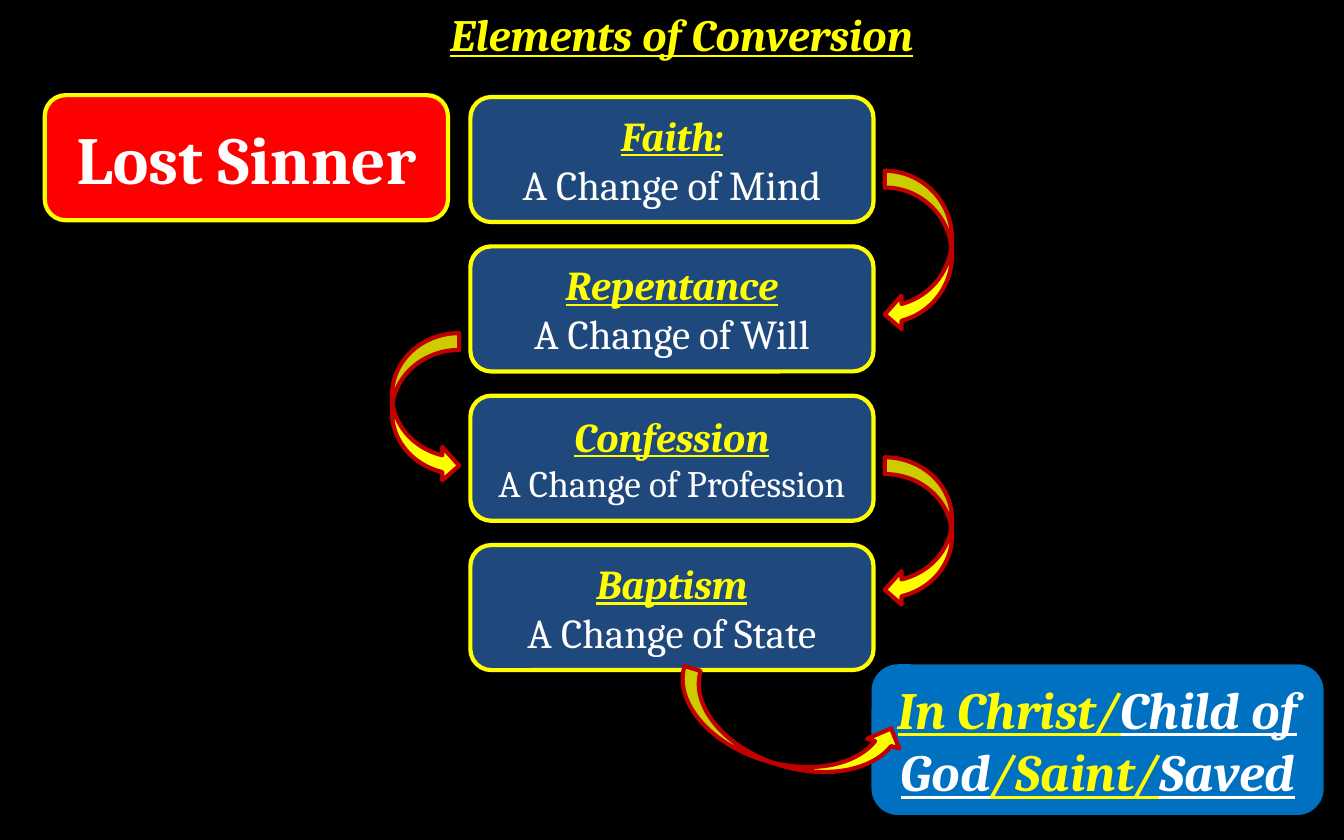
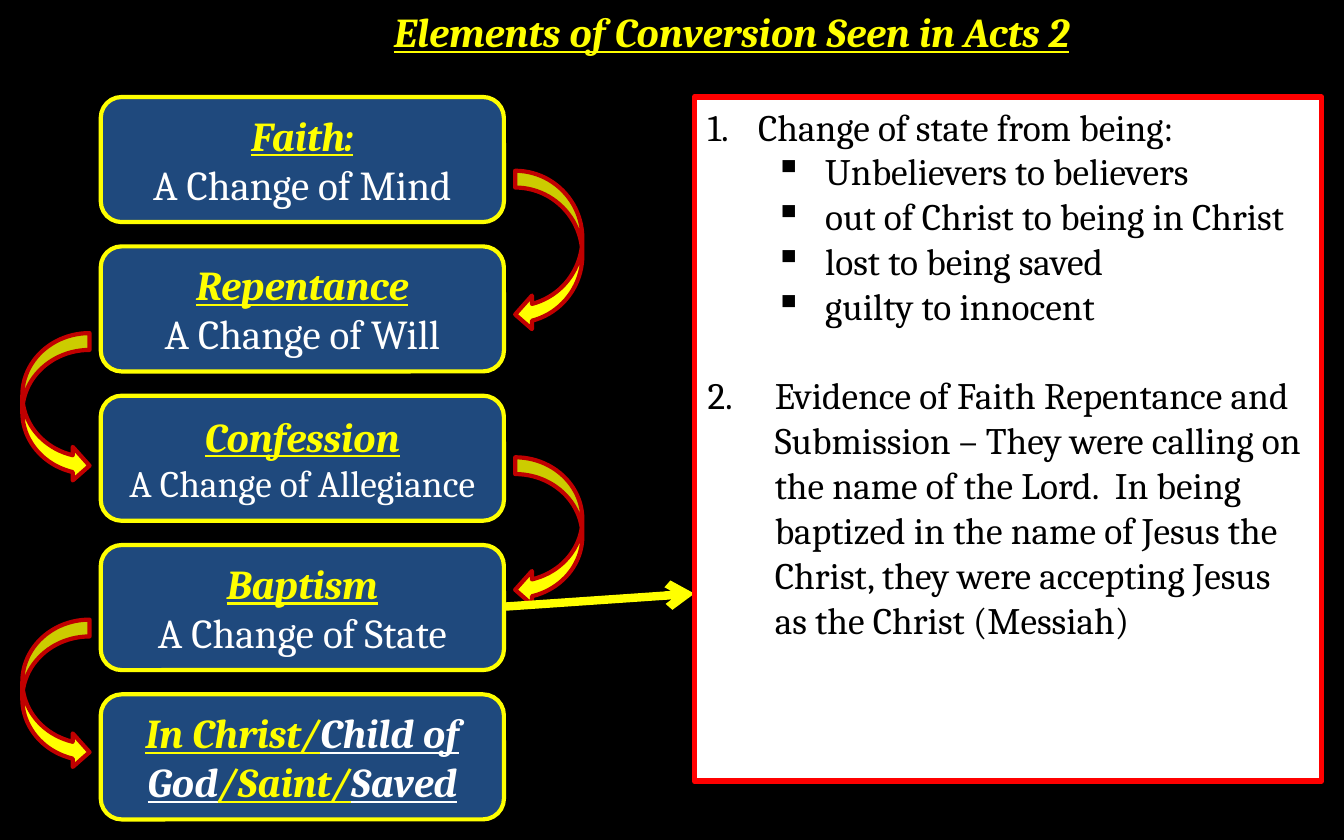
import pptx
import pptx.util
import pptx.dml.color
import pptx.enum.shapes
import pptx.enum.text
import pptx.oxml
import pptx.oxml.ns
import lxml.etree

Pt = pptx.util.Pt
SHAPE = pptx.enum.shapes.MSO_SHAPE
ALIGN = pptx.enum.text.PP_ALIGN
ANCHOR = pptx.enum.text.MSO_ANCHOR
qn = pptx.oxml.ns.qn

# Shared style
FONT = "Cambria"
BLACK, WHITE, YELLOW = "000000", "FFFFFF", "FFFF00"
NAVY, BLUE, RED, DARK_RED = "1F497D", "0070C0", "FF0000", "C00000"

# Content: step name, its meaning, size of the meaning
def steps(confession_change):
    return [
        ("Faith:", "A Change of Mind", 22),
        ("Repentance", "A Change of Will", 22),
        ("Confession", confession_change, 20),
        ("Baptism", "A Change of State", 22),
    ]


OUTCOME = [("In Christ/", YELLOW), ("Child of God", WHITE),
           ("/Saint/", YELLOW), ("Saved", WHITE)]

# Notes: text, level, hanging indent, left margin, space before
NOTES = [
    ("Change of state from being:", 0, 27, 27, 0),
    ("Unbelievers to believers", 1, 27, 63, 0),
    ("out of Christ to being in Christ", 1, 27, 63, 0),
    ("lost to being saved", 1, 27, 63, 0),
    ("guilty to innocent", 1, 27, 63, 0),
    ("Evidence of Faith Repentance and Submission – They were calling on "
     "the name of the Lord.  In being baptized in the name of Jesus the "
     "Christ, they were accepting Jesus as the Christ (Messiah)", 0, 36, 36, 24),
]

# Layout of the step column
STEP_TOP, STEP_PITCH, STEP_W, STEP_H = 52, 80, 216, 67
ARROW_W, ARROW_GAP = 36, 6
# Arrow side, top, height
STEP_ARROWS = [("right", 91.5, 86), ("right", 245, 80), ("left", 178.5, 80)]


def color(value):
    return pptx.dml.color.RGBColor.from_string(value)


def style(font, size, ink, emphatic=False, bold=False):
    font.name, font.size = FONT, Pt(size)
    font.bold = emphatic or bold
    font.italic = font.underline = emphatic
    if ink:
        font.color.rgb = color(ink)


def add_box(slide, kind, place, fill, line, weight=2.25):
    box = slide.shapes.add_shape(kind, *(Pt(v) for v in place))
    box.shadow.inherit = False
    box.fill.solid()
    box.fill.fore_color.rgb = color(fill)
    box.line.color.rgb = color(line)
    box.line.width = Pt(weight)
    box.text_frame.word_wrap = True
    return box


def write_lines(box, lines):
    """Each line: text, size, ink, emphatic, bold."""
    frame = box.text_frame
    frame.vertical_anchor = ANCHOR.MIDDLE
    for i, (text, *look) in enumerate(lines):
        line = frame.add_paragraph() if i else frame.paragraphs[0]
        line.alignment = ALIGN.CENTER
        line.add_run().text = text
        style(line.font, *look)


def write_outcome(box, size):
    box.text_frame.vertical_anchor = ANCHOR.MIDDLE
    line = box.text_frame.paragraphs[0]
    line.alignment = ALIGN.CENTER
    style(line.font, size, None, True)
    for text, ink in OUTCOME:
        run = line.add_run()
        run.text = text
        run.font.color.rgb = color(ink)


def add_slide(deck, heading, left, width, height, size):
    slide = deck.slides.add_slide(deck.slide_layouts[5])
    slide.background.fill.solid()
    slide.background.fill.fore_color.rgb = color(BLACK)
    title = slide.shapes.title
    title.left, title.top = Pt(left), Pt(0)
    title.width, title.height = Pt(width), Pt(height)
    frame = title.text_frame
    frame.text = heading
    frame.word_wrap = False
    frame.auto_size = pptx.enum.text.MSO_AUTO_SIZE.SHAPE_TO_FIT_TEXT
    frame.vertical_anchor = ANCHOR.TOP
    frame.paragraphs[0].alignment = ALIGN.LEFT
    style(frame.paragraphs[0].font, size, YELLOW, True)
    return slide


def step_place(left, index):
    return left, STEP_TOP + index * STEP_PITCH, STEP_W, STEP_H


def add_arrow(slide, column, side, top, height):
    if side == "right":
        kind, left = SHAPE.CURVED_LEFT_ARROW, column + STEP_W + ARROW_GAP
    else:
        kind, left = SHAPE.CURVED_RIGHT_ARROW, column - ARROW_GAP - ARROW_W
    return add_box(slide, kind, (left, top, ARROW_W, height), YELLOW, DARK_RED)


def add_steps(slide, column, rows):
    for i, (name, meaning, size) in enumerate(rows):
        box = add_box(slide, SHAPE.ROUNDED_RECTANGLE, step_place(column, i), NAVY, YELLOW)
        write_lines(box, [(name, 22, YELLOW, True), (meaning, size, WHITE)])
    for arrow in STEP_ARROWS:
        add_arrow(slide, column, *arrow)


def write_notes(box):
    frame = box.text_frame
    frame.vertical_anchor = ANCHOR.TOP
    for i, (text, level, hang, margin, before) in enumerate(NOTES):
        note = frame.add_paragraph() if i else frame.paragraphs[0]
        note.add_run().text = text
        note.level = level
        note.alignment = ALIGN.LEFT
        props = note._p.get_or_add_pPr()
        props.set("marL", str(Pt(margin)))
        props.set("indent", str(-Pt(hang)))
        if level:
            lxml.etree.SubElement(props, qn("a:buChar")).set("char", "▪")
        else:
            lxml.etree.SubElement(props, qn("a:buAutoNum")).set("type", "arabicPeriod")
        note.space_before = Pt(before)
        style(note.font, 20, BLACK)


def add_pointer(slide, start, end):
    pointer = slide.shapes.add_connector(
        pptx.enum.shapes.MSO_CONNECTOR.STRAIGHT, *(Pt(v) for v in start + end))
    pointer.line.color.rgb = color(YELLOW)
    pointer.line.width = Pt(4.5)
    lxml.etree.SubElement(pointer.line._get_or_add_ln(), qn("a:tailEnd")).set("type", "arrow")
    lxml.etree.SubElement(pointer._element.spPr, qn("a:effectLst"))


def build_conversion(deck):
    slide = add_slide(deck, "Elements of Conversion", 234, 266.4, 36, 24)
    column = 252
    add_steps(slide, column, steps("A Change of Profession"))

    # Where the steps lead
    outcome = add_box(slide, SHAPE.ROUNDED_RECTANGLE, (468, 357, 240, 78.5), BLUE, BLUE)
    write_outcome(outcome, 28)
    last_arrow = add_box(slide, SHAPE.CURVED_RIGHT_ARROW,
                         (403.2, 329.8, ARROW_W, 124.6), YELLOW, DARK_RED)
    last_arrow.rotation = 286.8

    # Where they begin
    sinner = add_box(slide, SHAPE.ROUNDED_RECTANGLE, (24, 51, STEP_W, STEP_H), RED, YELLOW)
    write_lines(sinner, [("Lost Sinner", 36, WHITE, False, True)])


def build_acts(deck):
    slide = add_slide(deck, "Elements of Conversion Seen in Acts 2", 203.8, 385.2, 33.8, 22)
    column = 54
    add_steps(slide, column, steps("A Change of Allegiance"))

    # Last step of the column
    outcome = add_box(slide, SHAPE.ROUNDED_RECTANGLE, step_place(column, 4), NAVY, YELLOW)
    write_outcome(outcome, 22)
    add_arrow(slide, column, "left", 332, 80)

    # Notes on baptism
    add_pointer(slide, (column + STEP_W, 325), (372, 318))
    notes = add_box(slide, SHAPE.RECTANGLE, (372, STEP_TOP, 336, 366.5), WHITE, RED, 3)
    write_notes(notes)


def main():
    deck = pptx.Presentation()
    deck.slide_width, deck.slide_height = Pt(720), Pt(450)
    build_conversion(deck)
    build_acts(deck)
    deck.save("out.pptx")


if __name__ == "__main__":
    main()
